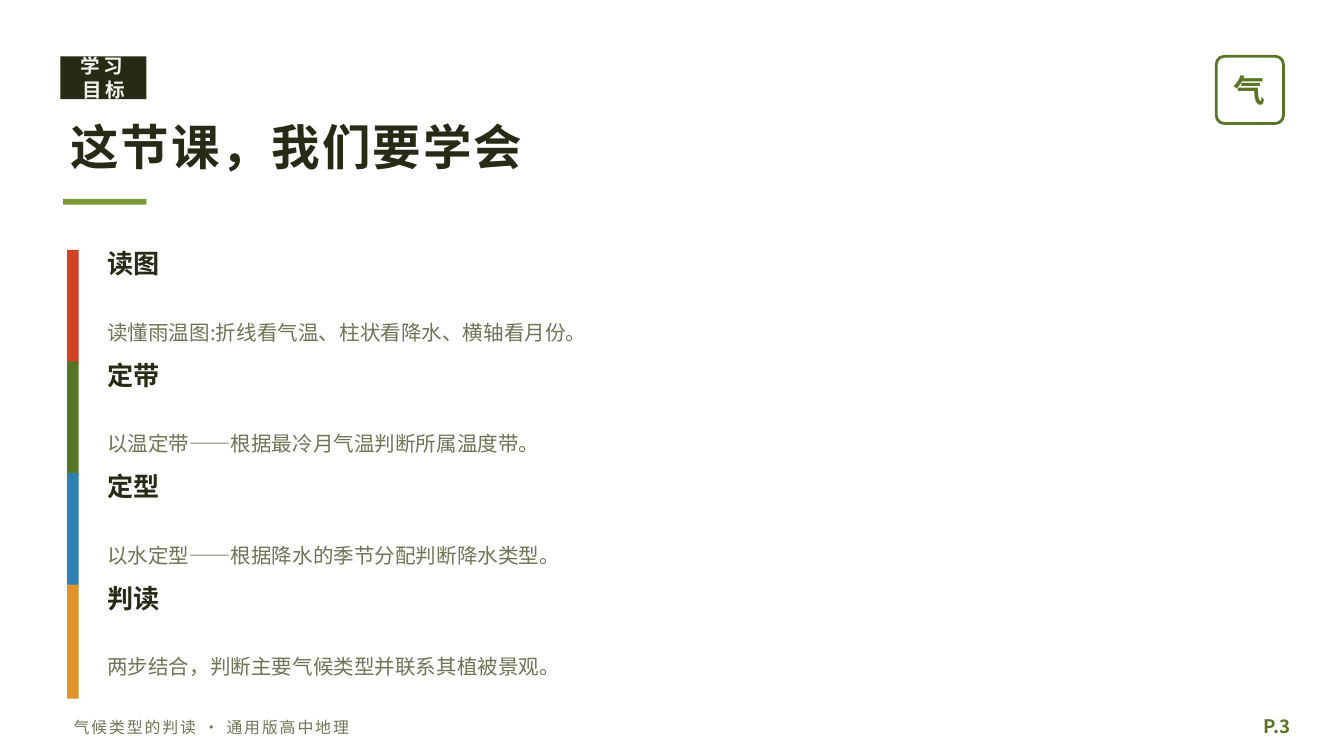
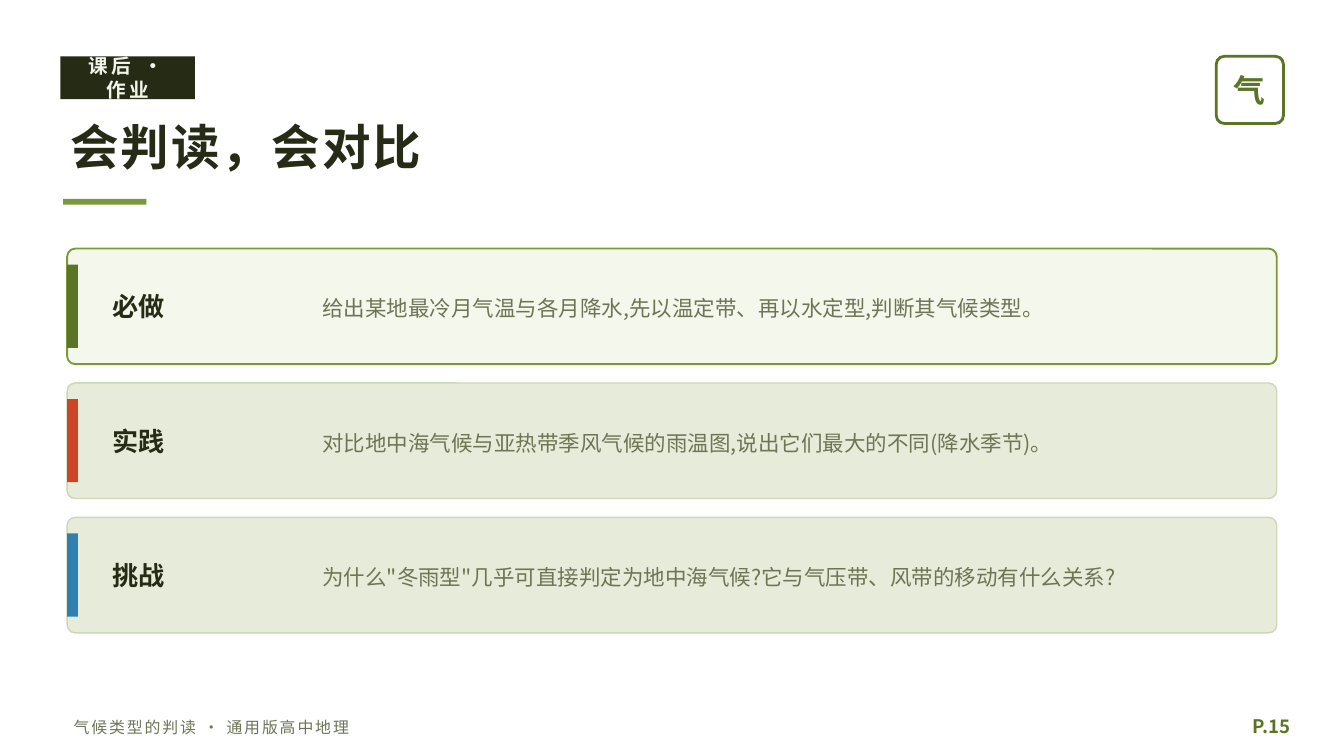
from lxml import etree
from pptx import Presentation
from pptx import util as u
from pptx.dml.color import RGBColor
from pptx.enum import shapes, text
from pptx.oxml.ns import qn

FONT = "Noto Sans CJK SC"
INK, MOSS, LEAF, GREY = "262B16", "5A7526", "7A9A3A", "6D7556"
RED, BLUE, GOLD = "CF4326", "2F7FB0", "E0922C"
PALE, WASH, SAGE, EDGE = "F1F4EA", "F4F7EC", "E6ECD9", "CCD8B6"
RECT = shapes.MSO_SHAPE.RECTANGLE
ROUND = shapes.MSO_SHAPE.ROUNDED_RECTANGLE
LEFT, MID, RIGHT = text.PP_ALIGN.LEFT, text.PP_ALIGN.CENTER, text.PP_ALIGN.RIGHT


def rgb(code):
    return RGBColor.from_string(code)


class Deck:
    """Holds the style and the slide being drawn."""

    def __init__(self):
        self.prs = Presentation()
        self.prs.slide_width, self.prs.slide_height = u.Pt(720), u.Pt(405)

    def page(self, tag, wide, title, num):
        """Start a slide with its tag, title, seal and footer."""
        self.slide = self.prs.slides.add_slide(self.prs.slide_layouts[6])
        self.box(32.4, 30.2, wide, 23, INK)
        self.text(tag, 32.4, 29.5, wide, 24.5, 10.5, PALE, True, MID, gap=2)
        self.text(title, 30.6, 56.2, 648, 44.6, 26, INK, True, gap=1)
        self.box(33.8, 106.6, 44.6, 3, LEAF)
        self.box(651.6, 30.2, 36, 36, line=(MOSS, 1.5), curve=0.12)
        self.text("气", 651.6, 29.5, 36, 37.4, 17, MOSS, True, MID)
        self.text("气候类型的判读 · 通用版高中地理", 32.4, 378.7, 475.2, 21.6,
                  8.5, GREY, gap=1)
        self.text(f"P.{num}", 648, 377.3, 50.4, 23, 10, MOSS, True, RIGHT)

    def box(self, x, y, w, h, fill=None, line=None, curve=None):
        """Draw a rectangle, rounded when curve is given; line is (colour, width)."""
        kind = RECT if curve is None else ROUND
        item = self.slide.shapes.add_shape(kind, *map(u.Pt, (x, y, w, h)))
        item.shadow.inherit = False
        if curve is not None:
            item.adjustments[0] = curve
        if fill:
            item.fill.solid()
            item.fill.fore_color.rgb = rgb(fill)
        else:
            item.fill.background()
        if line:
            item.line.color.rgb = rgb(line[0])
            item.line.width = u.Pt(line[1])
        else:
            item.line.fill.background()

    def text(self, words, x, y, w, h, size, ink, bold=False, align=LEFT,
             gap=0, lead=None):
        """Write one line of text; gap is letter spacing, lead is line height."""
        frame = self.slide.shapes.add_textbox(*map(u.Pt, (x, y, w, h))).text_frame
        para = frame.paragraphs[0]
        run = para.add_run()
        run.text = words
        looks = {
            frame: {"word_wrap": True, "vertical_anchor": text.MSO_ANCHOR.MIDDLE},
            para: {"alignment": align, "line_spacing": u.Pt(lead) if lead else None},
            run.font: {"name": FONT, "size": u.Pt(size), "bold": bold},
        }
        for part, vals in looks.items():
            for key, val in vals.items():
                setattr(part, key, val)
        run.font.color.rgb = rgb(ink)
        props = run._r.get_or_add_rPr()
        etree.SubElement(props, qn("a:ea")).set("typeface", FONT)
        if gap:
            props.set("spc", str(gap * 100))

    def goal(self, y, hue, head, body):
        self.box(36, y, 6.2, 61.2, hue)
        self.text(head, 50.4, y - 4.3, 633.6, 23, 14, INK, True)
        self.text(body, 50.4, y + 20.2, 633.6, 44.6, 11, GREY, lead=16)

    def card(self, y, hue, head, body, fill, line):
        self.box(36, y, 648, 61.9, fill, line, 0.07)
        self.box(36, y + 8.6, 5.8, 44.6, hue)
        self.text(head, 53.3, y + 7.2, 100.8, 47.5, 14, INK, True)
        self.text(body, 165.6, y + 5.7, 504, 50.4, 11.5, GREY, lead=16)


GOALS = [
    (RED, "读图", "读懂雨温图:折线看气温、柱状看降水、横轴看月份。"),
    (MOSS, "定带", "以温定带——根据最冷月气温判断所属温度带。"),
    (BLUE, "定型", "以水定型——根据降水的季节分配判断降水类型。"),
    (GOLD, "判读", "两步结合，判断主要气候类型并联系其植被景观。"),
]
MAIN = (WASH, (LEAF, 1))
REST = (SAGE, (EDGE, 0.75))
TASKS = [
    (MOSS, "必做", "给出某地最冷月气温与各月降水,先以温定带、再以水定型,判断其气候类型。", *MAIN),
    (RED, "实践", "对比地中海气候与亚热带季风气候的雨温图,说出它们最大的不同(降水季节)。", *REST),
    (BLUE, "挑战", '为什么"冬雨型"几乎可直接判定为地中海气候?它与气压带、风带的移动有什么关系?', *REST),
]


def main():
    deck = Deck()
    deck.page("学习目标", 46, "这节课，我们要学会", 3)
    for i, goal in enumerate(GOALS):
        deck.goal(133.9 + 59.76 * i, *goal)
    deck.page("课后 · 作业", 72, "会判读，会对比", 15)
    for i, task in enumerate(TASKS):
        deck.card(133.2 + 72 * i, *task)
    deck.prs.save("out.pptx")


if __name__ == "__main__":
    main()
